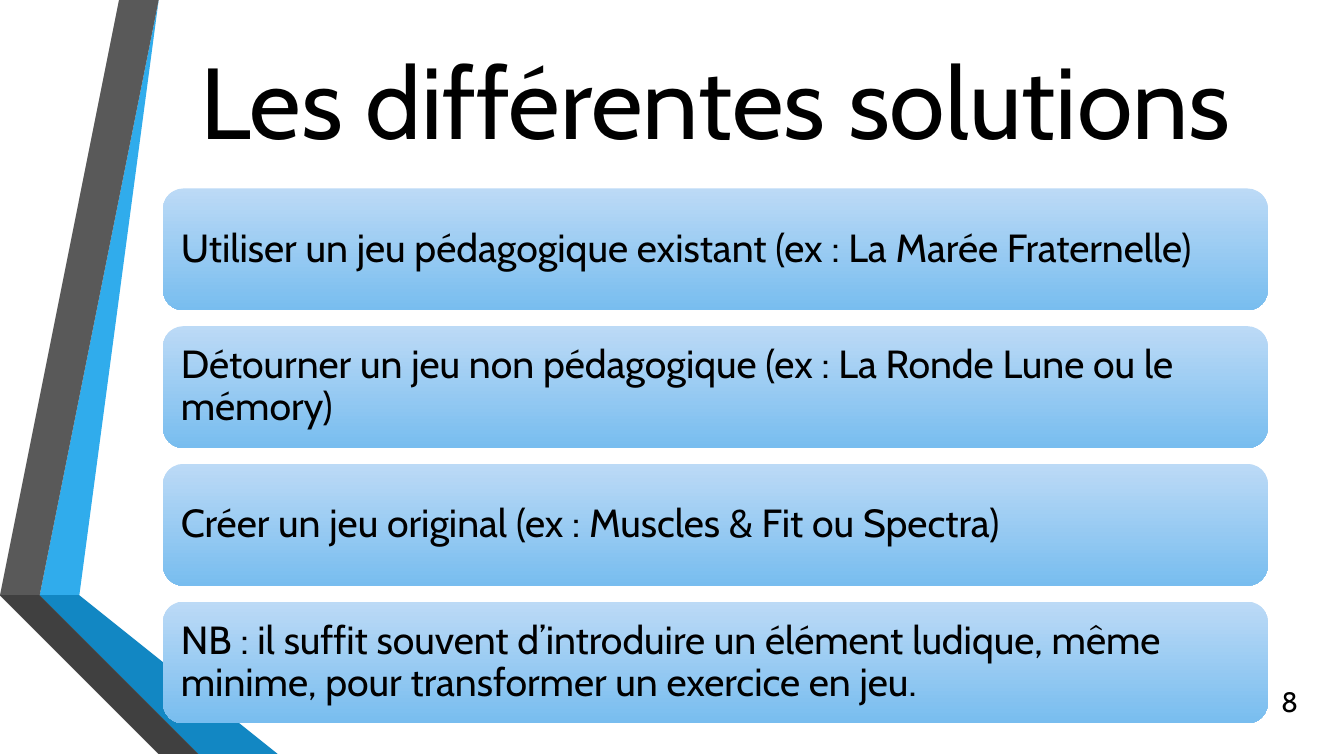
from pptx import Presentation
from pptx.dml.color import RGBColor
from pptx.enum.shapes import MSO_SHAPE
from pptx.enum.text import MSO_ANCHOR, MSO_AUTO_SIZE, PP_ALIGN
from pptx.util import Cm, Pt

ROUNDED = MSO_SHAPE.ROUNDED_RECTANGLE
MIDDLE = MSO_ANCHOR.MIDDLE
NO_FIT = MSO_AUTO_SIZE.NONE
LEFT, CENTER, RIGHT = PP_ALIGN.LEFT, PP_ALIGN.CENTER, PP_ALIGN.RIGHT

COLORS = {
    "text": "000000",
    "card_top": "BCDAF6",
    "card_bottom": "78BDEF",
    "blue": "30ACEC",
    "blue_fold": "1287C3",
    "blue_edge": "0C5A82",
    "gray": "595959",
    "gray_fold": "404040",
    "gray_edge": "262626",
}

# Ribbon outlines in centimetres, from back to front
RIBBONS = [
    ("blue", [(1.27, 14.68), (1.96, 14.81), (4.39, 0), (3.68, 0)]),
    ("gray", [(3.53, 0), (2.82, 0), (0.41, 14.55), (1.12, 14.66)]),
    ("gray_edge", [(0.41, 14.55), (3.68, 19.05), (3.84, 19.05)]),
    ("blue_edge", [(1.27, 14.71), (5.28, 19.05), (5.44, 19.05)]),
    ("blue_fold", [(1.27, 14.7), (5.44, 19.05), (7.19, 19.05), (1.96, 14.81)]),
    ("gray_fold", [(5.13, 19.05), (1.22, 14.81), (1.09, 14.68), (1.12, 14.66),
                   (0.41, 14.55), (3.84, 19.05)]),
]

SOLUTIONS = [
    "Utiliser un jeu pédagogique existant (ex : La Marée Fraternelle)",
    "Détourner un jeu non pédagogique (ex : La Ronde Lune ou le mémory)",
    "Créer un jeu original (ex : Muscles & Fit ou Spectra)",
    "NB : il suffit souvent d’introduire un élément ludique, même minime, "
    "pour transformer un exercice en jeu.",
]

CONTENT_LEFT, CONTENT_WIDTH = 4.11, 27.84
CARD_TOP, CARD_HEIGHT, CARD_PITCH = 4.75, 3.07, 3.47


class SlideBuilder:
    font = "Cabin"

    def __init__(self, slide):
        self.slide = slide

    def color(self, key):
        return RGBColor.from_string(COLORS[key])

    def set_text(self, shape, text, size, align, inset=0.25):
        frame = shape.text_frame
        frame.text = text
        frame.word_wrap = True
        frame.auto_size = NO_FIT
        frame.vertical_anchor = MIDDLE
        frame.margin_left = frame.margin_right = Cm(inset)
        frame.margin_top = frame.margin_bottom = Cm(inset / 2)
        paragraph = frame.paragraphs[0]
        paragraph.alignment = align
        font = paragraph.runs[0].font
        font.name, font.size = self.font, Pt(size)
        font.color.rgb = self.color("text")
        return paragraph

    def title(self, text, left, top, width, height):
        title = self.slide.shapes.title
        title.left, title.top = Cm(left), Cm(top)
        title.width, title.height = Cm(width), Cm(height)
        self.set_text(title, text, 72, CENTER)

    def ribbon(self, color, points):
        builder = self.slide.shapes.build_freeform(*points[0], scale=Cm(1))
        builder.add_line_segments(points[1:], close=True)
        ribbon = builder.convert_to_shape()
        ribbon.shadow.inherit = False
        ribbon.fill.solid()
        ribbon.fill.fore_color.rgb = self.color(color)
        ribbon.line.fill.background()

    def card(self, text, left, top, width, height):
        card = self.slide.shapes.add_shape(
            ROUNDED, Cm(left), Cm(top), Cm(width), Cm(height))
        card.shadow.inherit = False
        card.line.fill.background()
        card.fill.gradient()
        card.fill.gradient_angle = 270
        for stop, color in zip(card.fill.gradient_stops, ("card_top", "card_bottom")):
            stop.color.rgb = self.color(color)
        self.set_text(card, text, 28, LEFT, inset=0.3).line_spacing = 0.9

    def page_number(self, text, left, top, width, height):
        number = self.slide.shapes.add_textbox(
            Cm(left), Cm(top), Cm(width), Cm(height))
        self.set_text(number, text, 20, RIGHT)


def main():
    prs = Presentation()
    prs.slide_width, prs.slide_height = Cm(33.87), Cm(19.05)
    builder = SlideBuilder(prs.slides.add_slide(prs.slide_layouts[5]))

    # Folded ribbons on the left
    for color, points in RIBBONS:
        builder.ribbon(color, points)

    # Title
    builder.title("Les différentes solutions", CONTENT_LEFT, 0.86, CONTENT_WIDTH, 3.3)

    # One card per solution
    for index, solution in enumerate(SOLUTIONS):
        builder.card(solution, CONTENT_LEFT, CARD_TOP + index * CARD_PITCH,
                     CONTENT_WIDTH, CARD_HEIGHT)

    # Page number
    builder.page_number("8", 31.45, 17.15, 1.52, 1.02)

    prs.save("out.pptx")


if __name__ == "__main__":
    main()
